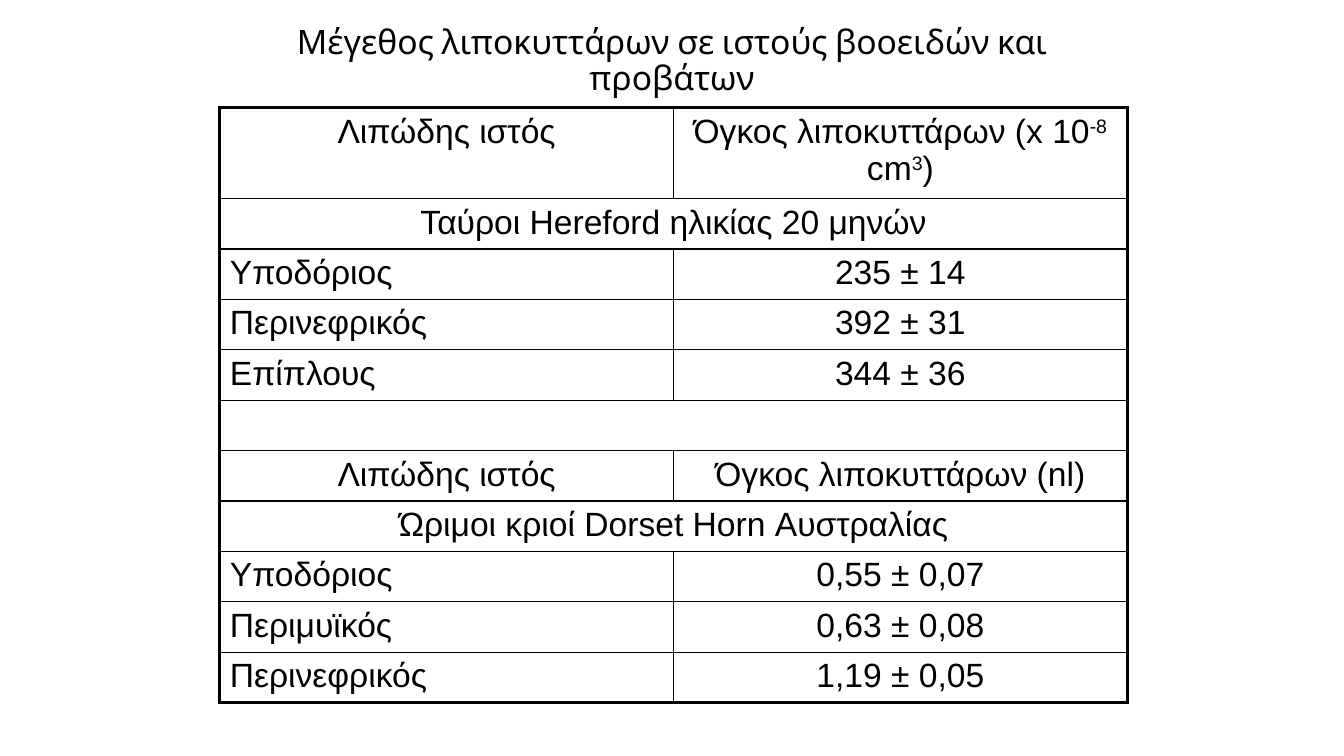
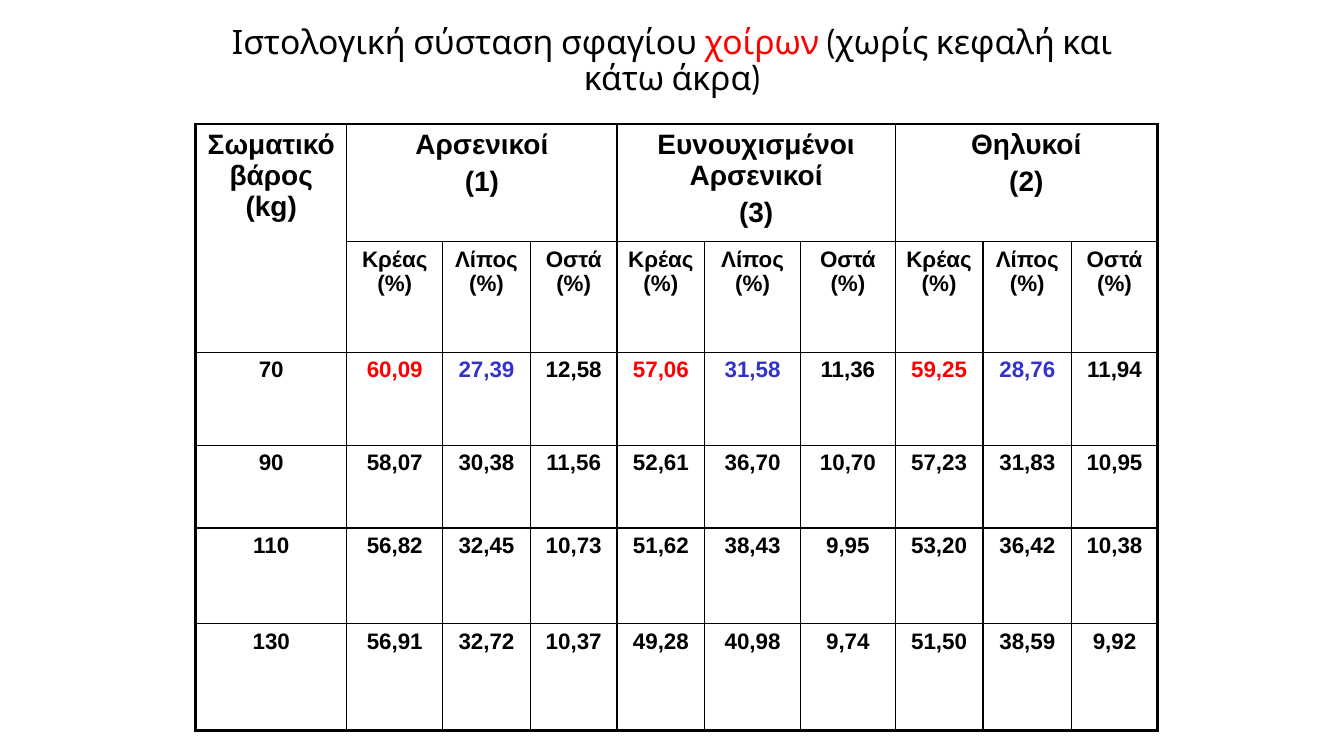
from lxml import etree
from pptx import Presentation
from pptx.dml.color import RGBColor
from pptx.enum.text import MSO_ANCHOR, MSO_AUTO_SIZE, PP_ALIGN
from pptx.oxml.ns import qn
from pptx.util import Inches, Pt

CENTER, LEFT = PP_ALIGN.CENTER, PP_ALIGN.LEFT
TOP, NO_AUTOFIT = MSO_ANCHOR.TOP, MSO_AUTO_SIZE.NONE

COLORS = {"ink": "000000", "paper": "FFFFFF", "red": "FF0000", "blue": "3333CC"}
TITLE_FONT, BODY_FONT = "Cabin", "Arial"
SLIDE_W, SLIDE_H = 13.33, 7.5
THICK, THIN = 2.25, 1
SUPER = {"baseline": 30000}


def write(frame, *paragraphs, size=24, font=BODY_FONT, color="ink", bold=False,
          align=CENTER, spacing=None):
    """Each paragraph is a string or a list of (text, overrides) runs."""
    for index, runs in enumerate(paragraphs):
        paragraph = frame.add_paragraph() if index else frame.paragraphs[0]
        paragraph.alignment = align
        if spacing:
            paragraph.line_spacing = spacing
        if index:
            paragraph.space_before = Pt(size * 0.2)
        for text, special in ([(runs, {})] if isinstance(runs, str) else runs):
            run = paragraph.add_run()
            run.text = text
            run.font.size = Pt(size)
            run.font.name = font
            run.font.bold = bold
            run.font.color.rgb = RGBColor.from_string(COLORS[special.get("color", color)])
            if "baseline" in special:
                run.font._element.set("baseline", str(special["baseline"]))


def add_titled_slide(deck, title_runs, width):
    slide = deck.slides.add_slide(deck.slide_layouts[5])
    title = slide.shapes.title
    title.left, title.top = Inches((SLIDE_W - width) / 2), Inches(0.21)
    title.width, title.height = Inches(width), Inches(0.91)
    frame = title.text_frame
    frame.word_wrap = True
    frame.auto_size = NO_AUTOFIT
    frame.vertical_anchor = TOP
    write(frame, title_runs, font=TITLE_FONT, spacing=0.88)
    return slide


def add_grid(slide, left, top, widths, heights):
    table = slide.shapes.add_table(
        len(heights), len(widths), Inches(left), Inches(top),
        Inches(sum(widths)), Inches(sum(heights))).table
    table.first_row = table.horz_banding = False
    for column, width in zip(table.columns, widths):
        column.width = Inches(width)
    for row, height in zip(table.rows, heights):
        row.height = Inches(height)
    return table


def add_border(cell, side, points):
    line = etree.SubElement(cell._tc.get_or_add_tcPr(), qn("a:" + side), w=str(Pt(points)))
    fill = etree.SubElement(line, qn("a:solidFill"))
    etree.SubElement(fill, qn("a:srgbClr"), val=COLORS["ink"])


def rule_grid(table):
    """Thick frame, thin inner lines, none inside merged cells."""
    last_row, last_col = len(table.rows), len(table.columns)
    for row in range(last_row):
        for col in range(last_col):
            origin = table.cell(row, col)
            if origin.is_spanned:
                continue
            bottom, right = row + origin.span_height, col + origin.span_width
            for r in range(row, bottom):
                for c in range(col, right):
                    cell = table.cell(r, c)
                    edges = (("lnL", c == col, col == 0),
                             ("lnR", c + 1 == right, right == last_col),
                             ("lnT", r == row, row == 0),
                             ("lnB", r + 1 == bottom, bottom == last_row))
                    for side, on_edge, outer in edges:
                        if on_edge or cell is origin or (r, c) == (row, col):
                            add_border(cell, side, THICK if outer else THIN)
                    cell.fill.solid()
                    cell.fill.fore_color.rgb = RGBColor.from_string(COLORS["paper"])


def add_fat_cell_table(slide, left, top):
    tissue = "Λιπώδης ιστός"
    volume = [("Όγκος λιποκυττάρων (x 10", {}), ("-8 ", SUPER), ("cm", {}),
              ("3", SUPER), (")", {})]
    # One entry means a row merged across both columns
    rows = [
        (tissue, volume),
        ("Ταύροι Hereford ηλικίας 20 μηνών",),
        ("Υποδόριος", "235 ± 14"),
        ("Περινεφρικός", "392 ± 31"),
        ("Επίπλους", "344 ± 36"),
        ("",),
        (tissue, "Όγκος λιποκυττάρων (nl)"),
        ("Ώριμοι κριοί Dorset Horn Αυστραλίας",),
        ("Υποδόριος", "0,55 ± 0,07"),
        ("Περιμυϊκός", "0,63 ± 0,08"),
        ("Περινεφρικός", "1,19 ± 0,05"),
    ]
    table = add_grid(slide, left, top, [4.5] * 2, [0.9] + [0.5] * 10)
    for r, entries in enumerate(rows):
        if len(entries) == 1:
            table.cell(r, 0).merge(table.cell(r, 1))
        for c, entry in enumerate(entries):
            is_label = len(entries) == 2 and c == 0 and entry != tissue
            if entry:
                write(table.cell(r, c).text_frame, entry,
                      align=LEFT if is_label else CENTER)
    rule_grid(table)


def add_carcass_table(slide, left, top):
    groups = [("Αρσενικοί", "(1)"), ("Ευνουχισμένοι Αρσενικοί", "(3)"), ("Θηλυκοί", "(2)")]
    parts = ["Κρέας (%)", "Λίπος (%)", "Οστά (%)"]
    part_colors = ["red", "blue", "ink"]
    weights = [
        ("70", "60,09", "27,39", "12,58", "57,06", "31,58", "11,36", "59,25", "28,76", "11,94"),
        ("90", "58,07", "30,38", "11,56", "52,61", "36,70", "10,70", "57,23", "31,83", "10,95"),
        ("110", "56,82", "32,45", "10,73", "51,62", "38,43", "9,95", "53,20", "36,42", "10,38"),
        ("130", "56,91", "32,72", "10,37", "49,28", "40,98", "9,74", "51,50", "38,59", "9,92"),
    ]
    table = add_grid(slide, left, top,
                     [1.5, 0.95, 0.87, 0.86, 0.87, 0.95, 0.94, 0.87, 0.88, 0.85],
                     [1.17, 1.1, 0.92, 0.82, 0.95, 1.06])
    # Headings
    table.cell(0, 0).merge(table.cell(1, 0))
    write(table.cell(0, 0).text_frame, "Σωματικό βάρος (kg)", size=20, bold=True)
    for g, group in enumerate(groups):
        first = 1 + g * len(parts)
        table.cell(0, first).merge(table.cell(0, first + len(parts) - 1))
        write(table.cell(0, first).text_frame, *group, size=20, bold=True)
        for p, part in enumerate(parts):
            write(table.cell(1, first + p).text_frame, part, size=16, bold=True)
    # Values: the lightest weight has its meat and fat shares coloured
    for r, values in enumerate(weights):
        for c, value in enumerate(values):
            color = part_colors[(c - 1) % 3] if r == 0 and c else "ink"
            write(table.cell(r + 2, c).text_frame, value, size=16, bold=True, color=color)
    rule_grid(table)


def main():
    deck = Presentation()
    deck.slide_width, deck.slide_height = Inches(SLIDE_W), Inches(SLIDE_H)

    fat_cells = add_titled_slide(
        deck, "Μέγεθος λιποκυττάρων σε ιστούς βοοειδών και προβάτων", 9.29)
    add_fat_cell_table(fat_cells, 2.18, 1.07)

    carcass = add_titled_slide(
        deck, [("Ιστολογική σύσταση σφαγίου ", {}), ("χοίρων", {"color": "red"}),
               (" (χωρίς κεφαλή και κάτω άκρα)", {})], 9.61)
    add_carcass_table(carcass, 1.94, 1.23)

    deck.save("out.pptx")


if __name__ == "__main__":
    main()
